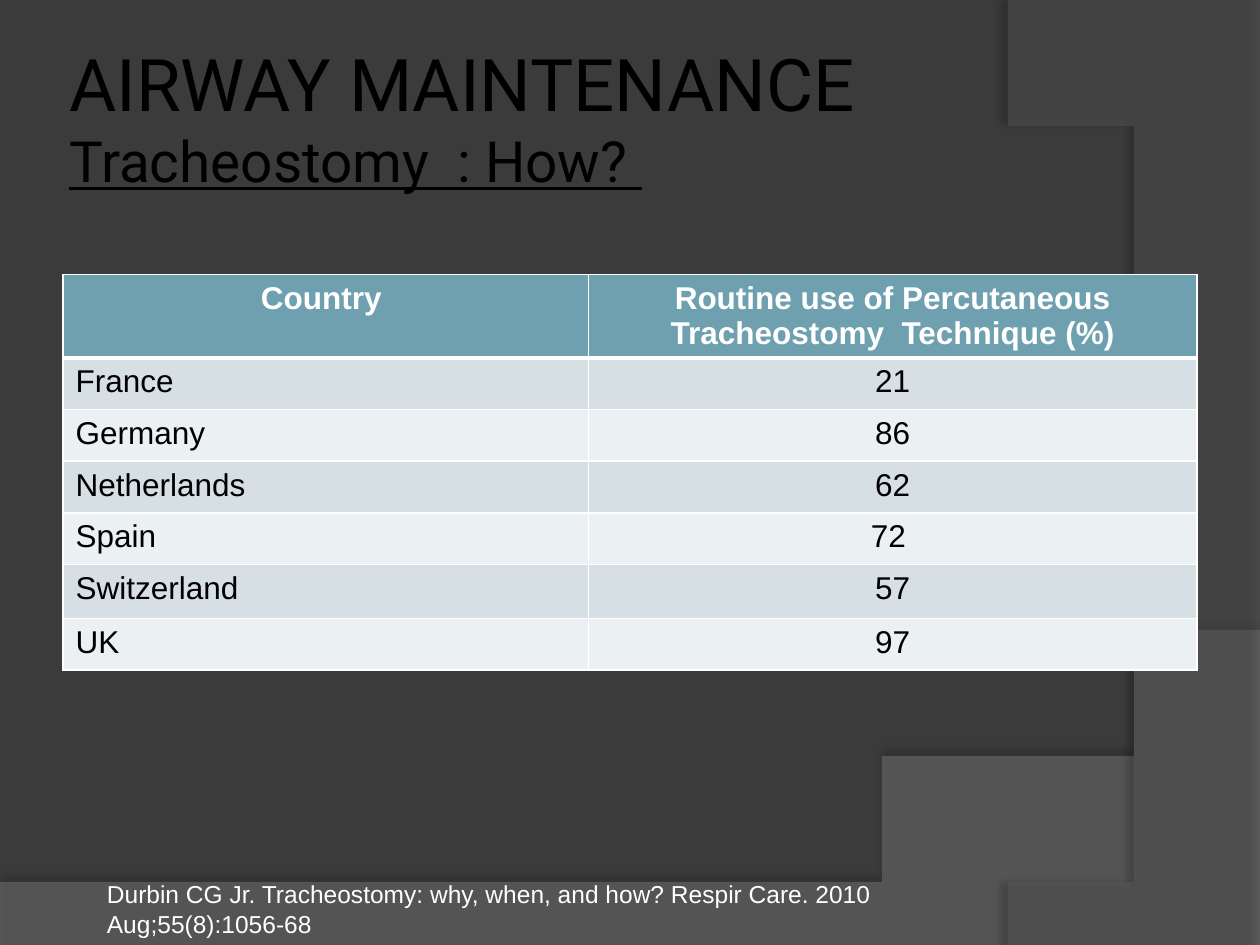
from lxml.etree import SubElement
from pptx import Presentation
from pptx.dml.color import RGBColor
from pptx.enum.text import MSO_ANCHOR as ANCHOR, MSO_AUTO_SIZE as AUTO, PP_ALIGN as ALIGN
from pptx.oxml import parse_xml
from pptx.oxml.ns import nsdecls, qn
from pptx.util import Inches, Pt

BACKGROUND = RGBColor(0x3B, 0x3B, 0x3B)
WAVE = RGBColor(0x7F, 0x7F, 0x7F)
ARC = RGBColor(0x5E, 0x5E, 0x5E)
BLACK = RGBColor(0, 0, 0)
WHITE = RGBColor(0xFF, 0xFF, 0xFF)
HEADER = RGBColor(0x6E, 0xA0, 0xB0)
BANDS = [RGBColor(0xD5, 0xDF, 0xE4), RGBColor(0xEB, 0xF0, 0xF2)]

HEADINGS = ("Country ", "Routine use of Percutaneous Tracheostomy  Technique (%)")
USAGE = [
    ("France", "21"),
    ("Germany", "86"),
    ("Netherlands", "62"),
    ("Spain", "72 "),
    ("Switzerland", "57"),
    ("UK", "97"),
]


def format_font(font, face, size, color, bold=False):
    font.name = face
    font.size = Pt(size)
    font.color.rgb = color
    font.bold = bold


def bezier(p0, p1, p2, p3, steps=60):
    def point(t):
        u = 1 - t
        return tuple(
            u**3 * a + 3 * u * u * t * b + 3 * u * t * t * c + t**3 * d
            for a, b, c, d in zip(p0, p1, p2, p3)
        )
    return [point(i / steps) for i in range(steps + 1)]


def add_swoosh(slide, points, color, opacity, shadow_opacity, distance, angle):
    builder = slide.shapes.build_freeform(*points[0], scale=Inches(1))
    builder.add_line_segments(points[1:], close=True)
    sp = builder.convert_to_shape()
    sp.fill.solid()
    sp.fill.fore_color.rgb = color
    fill = sp.fill.fore_color._xFill
    SubElement(fill[0], qn("a:alpha"), val=str(opacity * 1000))
    sp.line.fill.background()
    sp.shadow.inherit = False
    effects = sp._element.spPr.find(qn("a:effectLst"))
    effects.append(parse_xml(
        f'<a:outerShdw {nsdecls("a")} blurRad="{Pt(4)}" dist="{Pt(distance)}" '
        f'dir="{angle * 60000}" algn="ctr" rotWithShape="0"><a:srgbClr val="{BLACK}">'
        f'<a:alpha val="{shadow_opacity * 1000}"/></a:srgbClr></a:outerShdw>'
    ))


def add_backdrop(slide):
    slide.background.fill.solid()
    slide.background.fill.fore_color.rgb = BACKGROUND
    wave = bezier((10, 5.2), (5.59, 7.29), (3.91, 7.19), (0, 7.05))
    add_swoosh(slide, [(0, 7.51), (10, 7.51)] + wave, WAVE, 45, 35, 3.5, 270)
    arc = bezier((8.21, 7.5), (9.35, 6.19), (10.18, 3), (8, 0))
    add_swoosh(slide, [(10, 0.02), (10, 7.5)] + arc, ARC, 40, 45, 4, 180)


def add_title(slide, left, top, width, height):
    sp = slide.shapes.title
    slide.shapes._spTree.append(sp._element)
    sp.left, sp.top, sp.width, sp.height = left, top, width, height
    tf = sp.text_frame
    tf.text = "AIRWAY MAINTENANCE \vTracheostomy  : How? "
    tf.word_wrap = True
    tf.auto_size = AUTO.NONE
    tf.vertical_anchor = ANCHOR.MIDDLE
    tf.margin_left = tf.margin_right = tf.margin_top = tf.margin_bottom = Inches(0.05)
    p = tf.paragraphs[0]
    p.alignment = ALIGN.LEFT
    for r, size in zip(p.runs, (41.4, 32.4)):
        format_font(r.font, "Roboto", size, BLACK)
    p.runs[1].font.underline = True


def set_borders(cell, top=1, bottom=1):
    tc_pr = cell._tc.get_or_add_tcPr()
    widths = {"lnL": 1, "lnR": 1, "lnT": top, "lnB": bottom}
    for i, (side, width) in enumerate(widths.items()):
        tc_pr.insert(i, parse_xml(
            f'<a:{side} {nsdecls("a")} w="{Pt(width)}"><a:solidFill>'
            f'<a:srgbClr val="{WHITE}"/></a:solidFill></a:{side}>'
        ))


def add_usage_table(slide, left, top, width, height):
    rows = [HEADINGS] + USAGE
    table = slide.shapes.add_table(len(rows), 2, left, top, width, height).table
    table.columns[0].width = Inches(4.17)
    table.columns[1].width = width - Inches(4.17)
    for i, values in enumerate(rows):
        is_header = i == 0
        table.rows[i].height = Inches({0: 0.65, 5: 0.43}.get(i, 0.41))
        for j, value in enumerate(values):
            cell = table.cell(i, j)
            cell.text = value
            cell.fill.solid()
            cell.fill.fore_color.rgb = HEADER if is_header else BANDS[(i - 1) % 2]
            set_borders(cell, top=3 if i == 1 else 1, bottom=3 if is_header else 1)
            p = cell.text_frame.paragraphs[0]
            p.alignment = ALIGN.CENTER if is_header or j == 1 else ALIGN.LEFT
            format_font(p.runs[0].font, "Arial", 18, WHITE if is_header else BLACK, is_header)


def add_citation(slide, left, top, width, height):
    tf = slide.shapes.add_textbox(left, top, width, height).text_frame
    tf.word_wrap = True
    tf.auto_size = AUTO.SHAPE_TO_FIT_TEXT
    tf.text = ("Durbin CG Jr. Tracheostomy: why, when, and how? "
               "Respir Care. 2010 Aug;55(8):1056-68")
    format_font(tf.paragraphs[0].runs[0].font, "Arial", 14, WHITE)


def main():
    prs = Presentation()
    prs.slide_width, prs.slide_height = Inches(10), Inches(7.5)
    slide = prs.slides.add_slide(prs.slide_layouts[5])
    add_backdrop(slide)
    add_title(slide, Inches(0.5), Inches(0.3), Inches(8.17), Inches(1.25))
    add_usage_table(slide, Inches(0.5), Inches(2.18), Inches(9), Inches(3.16))
    add_citation(slide, Inches(0.75), Inches(6.93), Inches(7.55), Inches(0.34))
    prs.save("out.pptx")


if __name__ == "__main__":
    main()
